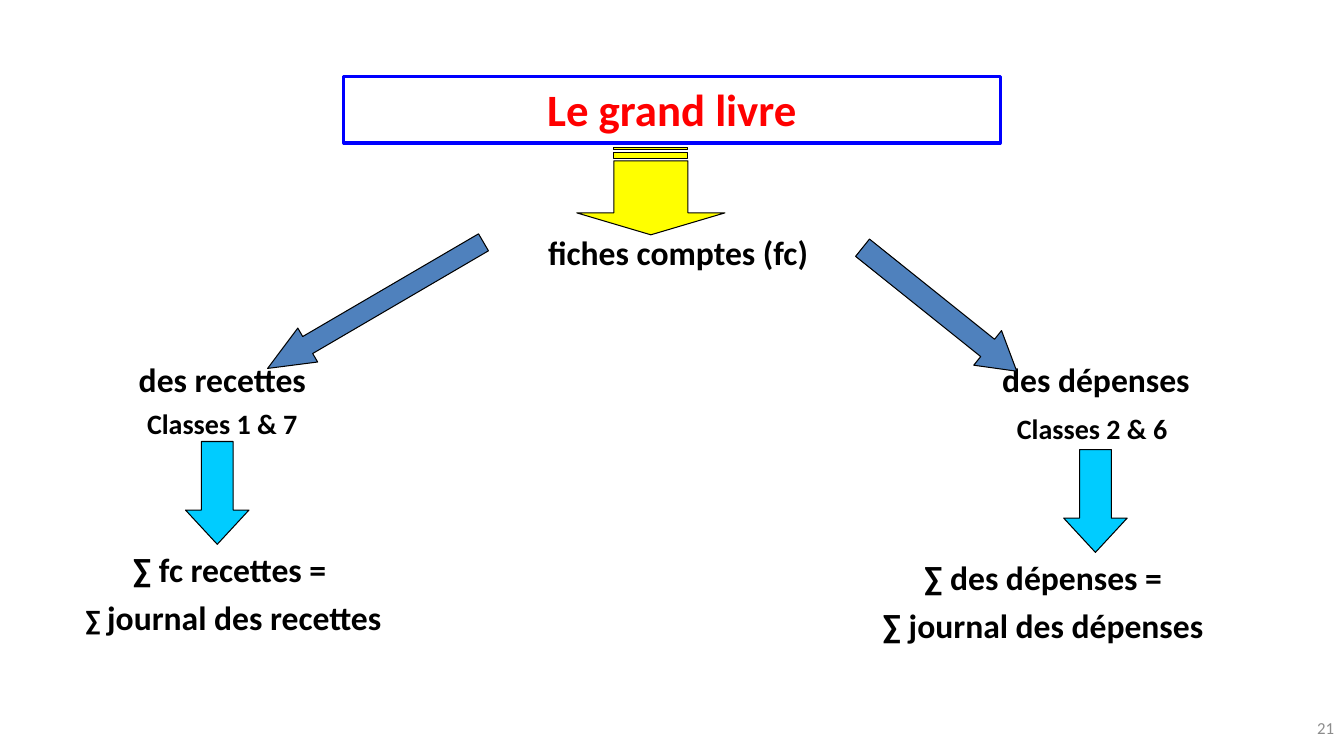
from pptx import Presentation
from pptx.dml.color import RGBColor
from pptx.enum.shapes import MSO_SHAPE as Shape
from pptx.enum.text import MSO_ANCHOR as Anchor, PP_ALIGN as Align
from pptx.util import Inches, Pt

BLACK = RGBColor(0, 0, 0)
RED = RGBColor(0xFF, 0, 0)
BLUE = RGBColor(0, 0, 0xFF)
GREY = RGBColor(0x8C, 0x8C, 0x8C)
YELLOW = RGBColor(0xFF, 0xFF, 0)
CYAN = RGBColor(0, 0xCC, 0xFF)
STEEL = RGBColor(0x4F, 0x81, 0xBD)
FONT = "Calibri"


def write(frame, paras, size=24, color=BLACK, bold=True, align=Align.CENTER,
          anchor=Anchor.TOP):
    """Fill a frame; each paragraph is a string or a list of (text, size) runs."""
    frame.word_wrap = True
    frame.vertical_anchor = anchor
    for i, runs in enumerate(paras):
        para = frame.paragraphs[0] if i == 0 else frame.add_paragraph()
        para.alignment = align
        if i:
            para.space_before = Pt(5)
        if isinstance(runs, str):
            runs = [(runs, size)]
        for text, points in runs:
            run = para.add_run()
            run.text = text
            font = run.font
            font.name, font.size, font.bold = FONT, Pt(points), bold
            font.color.rgb = color


def add_text(slide, box, paras, **style):
    label = slide.shapes.add_textbox(*map(Inches, box))
    write(label.text_frame, paras, **style)


def add_form(slide, kind, box, fill=None, line=BLACK, width=0.75):
    form = slide.shapes.add_shape(kind, *map(Inches, box))
    form.shadow.inherit = False
    if fill is None:
        form.fill.background()
    else:
        form.fill.solid()
        form.fill.fore_color.rgb = fill
    form.line.color.rgb = line
    form.line.width = Pt(width)
    return form


def add_arrow(slide, box, fill, head, turn=0, kind=Shape.DOWN_ARROW):
    arrow = add_form(slide, kind, box, fill)
    arrow.adjustments[0] = 0.5
    arrow.adjustments[1] = head
    arrow.rotation = turn


def main():
    deck = Presentation()
    deck.slide_width, deck.slide_height = Inches(13.33), Inches(7.5)
    slide = deck.slides.add_slide(deck.slide_layouts[6])

    add_text(slide, (12.22, 7.02, 1.11, 0.4), ["21"], size=12, color=GREY,
             bold=False, align=Align.RIGHT, anchor=Anchor.MIDDLE)
    title = add_form(slide, Shape.RECTANGLE, (3.41, 0.76, 6.51, 0.66),
                     line=BLUE, width=2.25)
    write(title.text_frame, ["Le grand livre"], size=32, color=RED)

    labels = [
        ((4.57, 2.25, 4.31, 0.5), ["fiches comptes (fc)"]),
        ((9.19, 3.51, 3.36, 0.99),
         ["des dépenses", [("Classes 2 & 6", 20), (" ", 24)]]),
        ((0.47, 3.51, 3.47, 0.91),
         ["des recettes", [("Classes 1 & 7", 20)]]),
        ((0.58, 5.4, 3.47, 1.39),
         ["∑ fc recettes = ", [("∑ ", 20), ("journal des recettes", 24)]]),
        ((8.14, 5.48, 4.41, 0.99),
         ["∑ des dépenses =", "∑ journal des dépenses"]),
    ]
    for box, paras in labels:
        add_text(slide, box, paras)

    for left, top in ((1.84, 4.38), (10.55, 4.46)):
        add_arrow(slide, (left, top, 0.63, 1.02), CYAN, 0.54)
    add_arrow(slide, (3.53, 1.79, 0.39, 2.48), STEEL, 1.18, turn=59.7)
    add_arrow(slide, (9.1, 2.09, 0.44, 1.96), STEEL, 0.84, turn=308.7)
    add_arrow(slide, (6.02, 1.16, 0.87, 1.47), YELLOW, 0.25, turn=90,
              kind=Shape.STRIPED_RIGHT_ARROW)

    deck.save("out.pptx")


if __name__ == "__main__":
    main()
